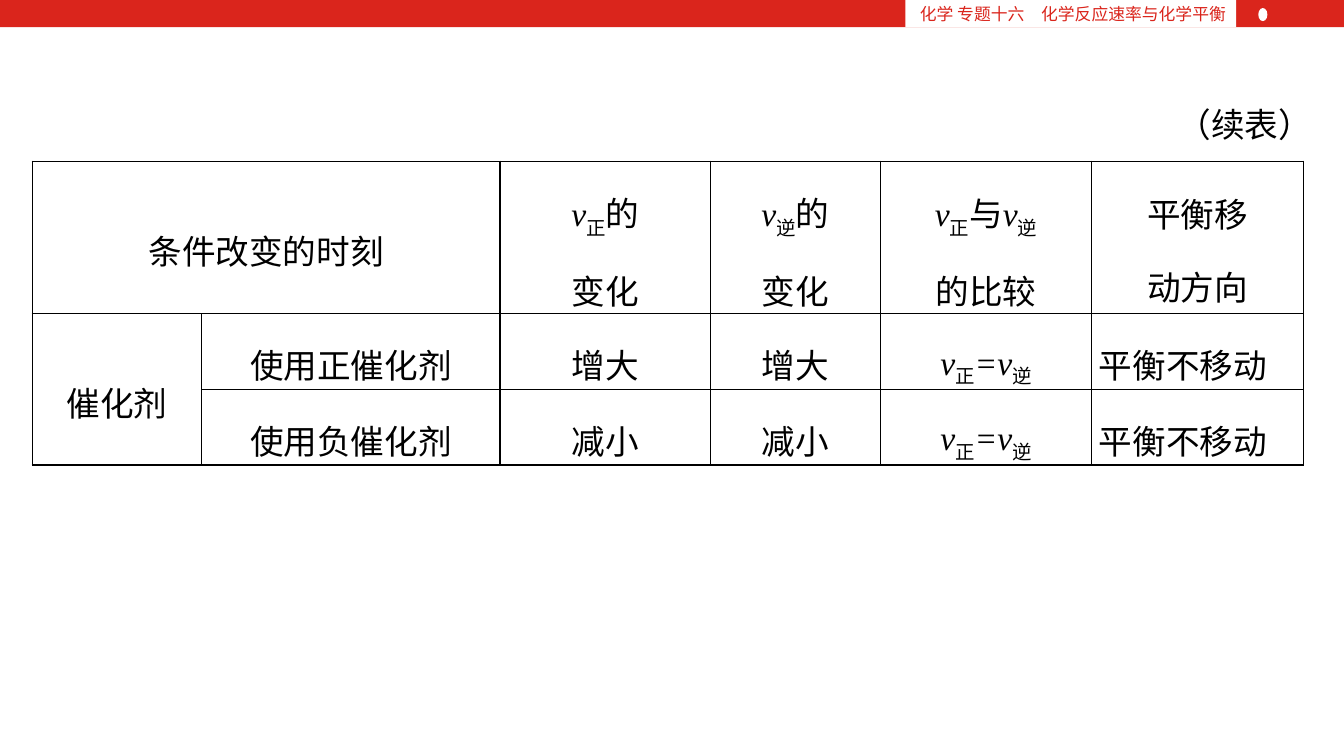
from lxml.etree import SubElement
from pptx import Presentation
from pptx.dml.color import RGBColor
from pptx.enum.shapes import MSO_SHAPE
from pptx.enum.text import MSO_ANCHOR, MSO_AUTO_SIZE, PP_ALIGN
from pptx.oxml.ns import qn
from pptx.util import Inches, Pt

COLORS = {"red": "DA251C", "white": "FFFFFF", "black": "000000"}
FONT = "Times New Roman"
SUBSCRIPTS = ("正", "逆")
COLUMNS = (1.68, 2.96, 2.09, 1.68, 2.1, 2.1)
ROWS = (1.5, 0.75, 0.75)
EQUAL_RATES = "v|正|=v|逆"
CELLS = (
    ("条件改变的时刻", "", "v|正|的\n变化", "v|逆|的\n变化",
     "v|正|与|v|逆\n的比较", "平衡移\n动方向"),
    ("催化剂", "使用正催化剂", "增大", "增大", EQUAL_RATES, "平衡不移动"),
    ("", "使用负催化剂", "减小", "减小", EQUAL_RATES, "平衡不移动"),
)
MERGES = (((0, 0), (0, 1)), ((1, 0), (2, 0)))


def color(name):
    """Return the named colour."""
    return RGBColor.from_string(COLORS[name])


def add_run(p, text, size, ink):
    """Add a run, with v in italics and 正 or 逆 alone as a subscript."""
    r = p.add_run()
    r.text = text
    formats = {"name": FONT, "size": Pt(size), "italic": text.endswith("v")}
    for key, value in formats.items():
        setattr(r.font, key, value)
    r.font.color.rgb = color(ink)
    if text in SUBSCRIPTS:
        r.font._element.set("baseline", "-25000")


def write(tf, text, size, ink, **formats):
    """Write lines of runs parted by bars, with paragraph formats."""
    for i, line in enumerate(text.split("\n")):
        p = tf.paragraphs[0] if i == 0 else tf.add_paragraph()
        for key, value in formats.items():
            setattr(p, key, value)
        for piece in line.split("|"):
            add_run(p, piece, size, ink)


def add_plain_shape(s, kind, left, top, width, height, fill):
    """Add a filled shape without outline or shadow."""
    sp = s.shapes.add_shape(kind, Inches(left), Inches(top),
                            Inches(width), Inches(height))
    sp.shadow.inherit = False
    sp.fill.solid()
    sp.fill.fore_color.rgb = color(fill)
    sp.line.fill.background()
    return sp


def add_borders(cell):
    """Draw thin black lines on the four sides of a cell."""
    props = cell._tc.get_or_add_tcPr()
    for i, side in enumerate(("a:lnL", "a:lnR", "a:lnT", "a:lnB")):
        line = props.makeelement(qn(side), {"w": str(Pt(1))})
        props.insert(i, line)
        fill = SubElement(line, qn("a:solidFill"))
        SubElement(fill, qn("a:srgbClr"), val=COLORS["black"])


def format_cell(cell, text, align, side_margin):
    """Fill one table cell and set its margins and borders."""
    formats = {"margin_left": Inches(side_margin),
               "margin_right": Inches(side_margin),
               "margin_top": 0, "margin_bottom": 0,
               "vertical_anchor": MSO_ANCHOR.MIDDLE}
    for key, value in formats.items():
        setattr(cell, key, value)
    cell.fill.background()
    add_borders(cell)
    if text:
        write(cell.text_frame, text, 24, "black", alignment=align,
              line_spacing=1.42 if text == EQUAL_RATES else 1.5)


def add_condition_table(s):
    """Add the table of conditions, rates and equilibrium shifts."""
    table = s.shapes.add_table(
        len(ROWS), len(COLUMNS), Inches(0.32), Inches(1.6),
        Inches(sum(COLUMNS)), Inches(sum(ROWS))).table
    table.first_row = table.horz_banding = False
    for column, width in zip(table.columns, COLUMNS):
        column.width = Inches(width)
    for row, height in zip(table.rows, ROWS):
        row.height = Inches(height)
    for start, end in MERGES:
        table.cell(*start).merge(table.cell(*end))
    for i, texts in enumerate(CELLS):
        for j, text in enumerate(texts):
            is_shift = i > 0 and j == len(COLUMNS) - 1
            align = PP_ALIGN.LEFT if is_shift else PP_ALIGN.CENTER
            format_cell(table.cell(i, j), text, align, 0.07 if is_shift else 0)


def add_continued_label(s):
    """Add the label above the table."""
    tf = s.shapes.add_textbox(Inches(11.58), Inches(0.98),
                              Inches(1.55), Inches(0.5)).text_frame
    tf.word_wrap = False
    tf.auto_size = MSO_AUTO_SIZE.SHAPE_TO_FIT_TEXT
    write(tf, "（续表）", 24, "black", alignment=PP_ALIGN.LEFT)


def main():
    """Build the slide and save it."""
    prs = Presentation()
    prs.slide_width, prs.slide_height = Inches(13.33), Inches(7.5)
    s = prs.slides.add_slide(prs.slide_layouts[6])
    add_plain_shape(s, MSO_SHAPE.RECTANGLE, 0, 0, 13.33, 0.27, "red")
    add_plain_shape(s, MSO_SHAPE.OVAL, 12.48, 0.08, 0.09, 0.13, "white")
    add_condition_table(s)
    topic = add_plain_shape(s, MSO_SHAPE.RECTANGLE, 8.98, 0, 3.28, 0.27, "white")
    topic.text_frame.vertical_anchor = MSO_ANCHOR.MIDDLE
    write(topic.text_frame, "化学 专题十六　化学反应速率与化学平衡", 12, "red",
          alignment=PP_ALIGN.RIGHT)
    add_continued_label(s)
    prs.save("out.pptx")


if __name__ == "__main__":
    main()
